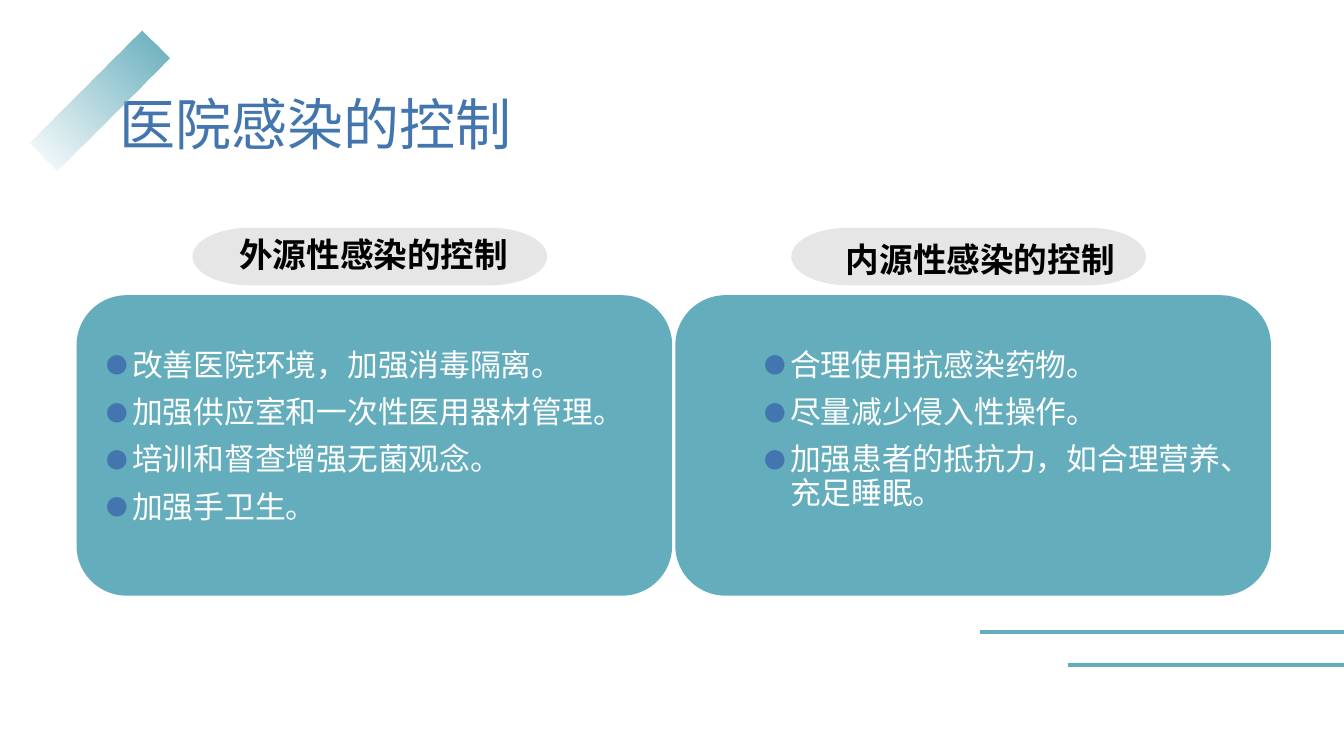
from lxml.etree import SubElement
from pptx import Presentation
from pptx.dml.color import RGBColor
from pptx.enum.shapes import MSO_CONNECTOR as Connector, MSO_SHAPE as Shape
from pptx.enum.text import MSO_ANCHOR as Anchor, PP_ALIGN as Align
from pptx.oxml.ns import qn
from pptx.util import Cm, Pt

TITLE = "医院感染的控制"
PANELS = [
    {"heading": "外源性感染的控制", "heading_box": (5.66, 5.82, 7.52, 1.27),
     "list_box": (2.44, 8.69, 13.74, 5.61),
     "items": ["改善医院环境，加强消毒隔离。", "加强供应室和一次性医用器材管理。",
               "培训和督查增强无菌观念。", "加强手卫生。"]},
    {"heading": "内源性感染的控制", "heading_box": (20.68, 5.74, 8.05, 1.73),
     "list_box": (19.02, 8.69, 12.95, 5.13),
     "items": ["合理使用抗感染药物。", "尽量减少侵入性操作。",
               "加强患者的抵抗力，如合理营养、充足睡眠。"]},
]
RULES = [(24.69, 15.93), (26.92, 16.76)]
FONT = "Noto Sans CJK SC"
TEAL, BLUE, GREY, WHITE, BLACK = "64ADBC", "4375AF", "E7E6E6", "FFFFFF", "000000"
WIDTH, HEIGHT = 33.87, 19.05
PANEL_LEFT, PANEL_STEP = 1.93, 15.09
PILL_INSET = 2.92


def color(value):
    return RGBColor.from_string(value)


def add_block(slide, kind, box, fill):
    shape = slide.shapes.add_shape(kind, *map(Cm, box))
    shape.shadow.inherit = False
    shape.fill.solid()
    shape.fill.fore_color.rgb = color(fill)
    shape.line.fill.background()
    return shape


def add_bullet(paragraph):
    properties = paragraph._p.get_or_add_pPr()
    properties.set("marL", str(Cm(0.64)))
    properties.set("indent", str(-Cm(0.64)))
    bullet_color = SubElement(properties, qn("a:buClr"))
    SubElement(bullet_color, qn("a:srgbClr"), val=BLUE)
    SubElement(properties, qn("a:buSzPct"), val="70000")
    SubElement(properties, qn("a:buFont"), typeface=FONT)
    SubElement(properties, qn("a:buChar"), char="●")


def add_text(slide, box, lines, size, ink, bold=False, align=Align.LEFT,
             anchor=Anchor.MIDDLE, bullets=False):
    frame = slide.shapes.add_textbox(*map(Cm, box)).text_frame
    frame.word_wrap = True
    frame.vertical_anchor = anchor
    for index, line in enumerate(lines):
        paragraph = frame.add_paragraph() if index else frame.paragraphs[0]
        paragraph.alignment = align
        paragraph.line_spacing = 0.9
        if bullets:
            paragraph.space_before = Pt(10)
            add_bullet(paragraph)
        run = paragraph.add_run()
        run.text = line
        run.font.size = Pt(size)
        run.font.bold = bold
        run.font.name = FONT
        run.font.color.rgb = color(ink)
        SubElement(run._r.get_or_add_rPr(), qn("a:ea"), typeface=FONT)


def add_rule(slide, left, top):
    rule = slide.shapes.add_connector(
        Connector.STRAIGHT, Cm(left), Cm(top), Cm(WIDTH), Cm(top))
    rule.line.color.rgb = color(TEAL)
    rule.line.width = Pt(3)
    SubElement(rule._element.spPr, qn("a:effectLst"))


def add_ribbon(slide):
    ribbon = add_block(slide, Shape.RECTANGLE, (0.51, 2.04, 3.99, 0.99), TEAL)
    ribbon.rotation = 315
    ribbon.fill.gradient()
    ribbon.fill.gradient_angle = 0
    for stop, position in zip(ribbon.fill.gradient_stops, (0, 1)):
        stop.color.rgb = color(TEAL)
        stop.position = position
    clear = ribbon._element.spPr.find(".//" + qn("a:srgbClr"))
    SubElement(clear, qn("a:alpha"), val="0")


def main():
    """Build the slide on hospital infection control."""
    presentation = Presentation()
    presentation.slide_width, presentation.slide_height = Cm(WIDTH), Cm(HEIGHT)
    slide = presentation.slides.add_slide(presentation.slide_layouts[6])
    add_text(slide, (2.77, 1.9, 29.21, 2.62), [TITLE], 40, BLUE)
    for index, panel in enumerate(PANELS):
        left = PANEL_LEFT + index * PANEL_STEP
        add_block(slide, Shape.ROUNDED_RECTANGLE, (left, 7.44, 15.01, 7.57), TEAL)
        add_block(slide, Shape.FLOWCHART_TERMINATOR,
                  (left + PILL_INSET, 5.74, 8.94, 1.45), GREY)
        add_text(slide, panel["heading_box"], [panel["heading"]], 24, BLACK,
                 bold=True, align=Align.CENTER)
        add_text(slide, panel["list_box"], panel["items"], 22, WHITE,
                 anchor=Anchor.TOP, bullets=True)
    for left, top in RULES:
        add_rule(slide, left, top)
    add_ribbon(slide)
    presentation.save("out.pptx")


if __name__ == "__main__":
    main()
